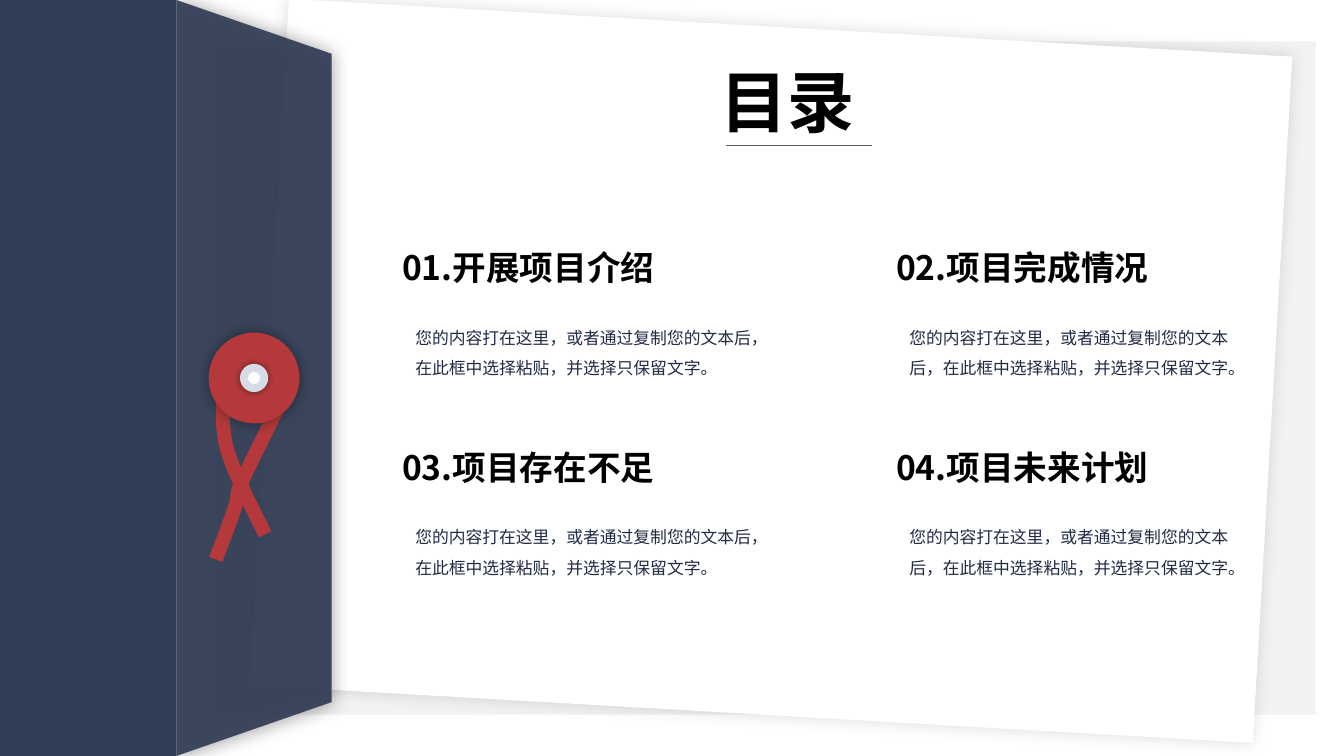
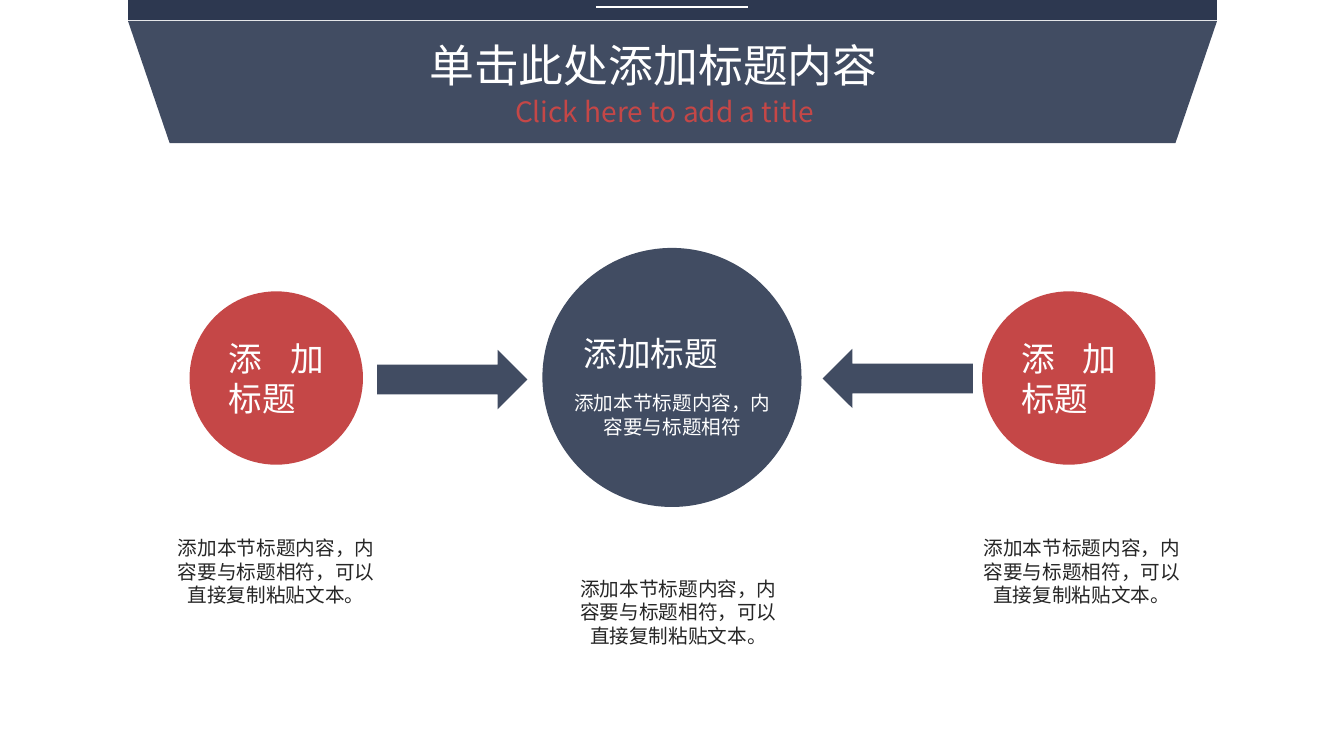
from lxml import etree
from pptx import Presentation
from pptx.dml.color import RGBColor
from pptx.enum import shapes, text
from pptx.oxml import ns
from pptx.util import Inches, Pt


class Theme:
    font = "Noto Sans CJK SC"
    navy, deep, slate = "313D55", "202C46", "414C62"
    red, coral = "B5393A", "C54747"
    white, black, ink = "FFFFFF", "000000", "262626"
    panel, metal, rule = "F2F2F2", "D6DCE5", "595959"
    cover, title, heading, sub, note, body = 48, 32, 24, 20, 14, 12


SHAPE, ALIGN = shapes.MSO_SHAPE, text.PP_ALIGN

# Content
CONTENTS_TITLE = "目录"
SECTIONS = ["01.开展项目介绍", "02.项目完成情况", "03.项目存在不足", "04.项目未来计划"]
SECTION_TEXT = "您的内容打在这里，或者通过复制您的文本后，在此框中选择粘贴，并选择只保留文字。"
COLUMNS = [(3.89, 3.58), (8.79, 3.5)]  # left, body width
ROW_TOP, ROW_STEP = 2.4, 1.98

PAGE_TITLE = "单击此处添加标题内容"
PAGE_SUBTITLE = "Click here to add a title"
LABEL = "添加标题"
HUB_TEXT = "添加本节标题内容，内容要与标题相符"
NOTE = "添加本节标题内容，内容要与标题相符，可以直接复制粘贴文本。"
SIDE_CIRCLES = [1.88, 9.74]
ARROWS = [(3.74, 3.47, 0), (8.16, 3.46, 180)]  # left, top, rotation
NOTES = [(1.66, 5.27), (9.65, 5.27), (5.65, 5.67)]

# Ribbon: start point, then cubic curves (two controls and an end)
RIBBON_START = (2.63, 5.3)
RIBBON = [
    ((2.48, 5), (2.32, 4.69), (2.25, 4.45)),
    ((2.19, 4.21), (2.21, 4), (2.23, 3.84)),
    ((2.24, 3.68), (2.25, 3.52), (2.33, 3.46)),
    ((2.41, 3.41), (2.62, 3.47), (2.7, 3.51)),
    ((2.79, 3.55), (2.83, 3.64), (2.85, 3.71)),
    ((2.86, 3.79), (2.87, 3.78), (2.79, 3.96)),
    ((2.72, 4.14), (2.47, 4.61), (2.4, 4.78)),
    ((2.32, 4.96), (2.38, 4.87), (2.34, 5)),
    ((2.3, 5.13), (2.22, 5.34), (2.14, 5.55)),
]
# Button: diameter, colour, shadow (opacity %, blur pt)
BUTTON_CENTRE = (2.52, 3.75)
BUTTON = [(0.9, Theme.red, (39, 10)), (0.28, Theme.metal, (40, 5)),
          (0.12, Theme.white, None)]


# Drawing helpers
def rgb(color):
    return RGBColor.from_string(color)


def child(parent, tag, **attrs):
    return etree.SubElement(parent, ns.qn(tag), {k: str(v) for k, v in attrs.items()})


def add_shape(s, kind, x, y, w, h, color, alpha=None, shadow=None, rot=0, adj=None):
    sp = s.shapes.add_shape(kind, Inches(x), Inches(y), Inches(w), Inches(h))
    sp.rotation = rot
    if adj is not None:
        sp.adjustments[0] = adj
    sp.fill.solid()
    sp.fill.fore_color.rgb = rgb(color)
    sp.line.fill.background()
    sp.shadow.inherit = False
    props = sp._element.spPr
    if alpha:
        child(props.find(".//" + ns.qn("a:srgbClr")), "a:alpha", val=alpha * 1000)
    if shadow:
        opacity, blur = shadow
        outer = child(props.find(ns.qn("a:effectLst")), "a:outerShdw",
                      blurRad=Pt(blur), dist=0, dir=0, algn="ctr", rotWithShape=0)
        child(child(outer, "a:srgbClr", val=Theme.black), "a:alpha", val=opacity * 1000)
    return sp


def add_line(s, x1, x2, y, color, width):
    line = s.shapes.add_connector(shapes.MSO_CONNECTOR.STRAIGHT,
                                  Inches(x1), Inches(y), Inches(x2), Inches(y))
    line.line.color.rgb = rgb(color)
    line.line.width = Pt(width)
    child(line._element.spPr, "a:effectLst")


def add_text(s, content, x, y, w, h, size, color, bold=False,
             align=ALIGN.JUSTIFY, spacing=None):
    tf = s.shapes.add_textbox(Inches(x), Inches(y), Inches(w), Inches(h)).text_frame
    tf.word_wrap = True
    tf.auto_size = text.MSO_AUTO_SIZE.SHAPE_TO_FIT_TEXT
    p = tf.paragraphs[0]
    p.alignment = align
    p.line_spacing = spacing
    r = p.add_run()
    r.text = content
    r.font.size, r.font.bold, r.font.name = Pt(size), bold, Theme.font
    r.font.color.rgb = rgb(color)
    child(r.font._element, "a:ea", typeface=Theme.font)


def curve_points(start, curves, steps=12):
    points = []
    for c1, c2, end in curves:
        for i in range(1, steps + 1):
            t = i / steps
            u = 1 - t
            points.append(tuple(
                Inches(u**3 * a + 3 * u * u * t * b + 3 * u * t * t * c + t**3 * d)
                for a, b, c, d in zip(start, c1, c2, end)))
        start = end
    return points


def add_ribbon(s):
    x, y = RIBBON_START
    builder = s.shapes.build_freeform(Inches(x), Inches(y))
    builder.add_line_segments(curve_points(RIBBON_START, RIBBON), close=False)
    sp = builder.convert_to_shape()
    sp.fill.background()
    sp.line.color.rgb = rgb(Theme.red)
    sp.line.width = Pt(10)
    sp.shadow.inherit = False


# Slides
def contents_slide(s):
    # Paper and folder
    add_shape(s, SHAPE.RECTANGLE, 2.14, 0.41, 10.91, 6.68, Theme.panel)
    add_shape(s, SHAPE.RECTANGLE, 2.66, 0.27, 9.97, 6.82, Theme.white,
              shadow=(13, 11), rot=3.3)
    add_shape(s, SHAPE.TRAPEZOID, -1.23, 2.98, 7.5, 1.54, Theme.navy, alpha=92,
              shadow=(36, 13), rot=90, adj=0.347)
    add_shape(s, SHAPE.RECTANGLE, 0, 0, 1.75, 7.5, Theme.navy)

    # Ribbon and button
    add_ribbon(s)
    cx, cy = BUTTON_CENTRE
    for d, color, shadow in BUTTON:
        add_shape(s, SHAPE.OVAL, cx - d / 2, cy - d / 2, d, d, color, shadow=shadow)

    # Title and sections
    add_text(s, CONTENTS_TITLE, 7.05, 0.55, 1.71, 0.91, Theme.cover, Theme.black, bold=True)
    add_line(s, 7.2, 8.65, 1.44, Theme.rule, 0.75)
    for i, heading in enumerate(SECTIONS):
        row, col = divmod(i, len(COLUMNS))
        x, width = COLUMNS[col]
        y = ROW_TOP + row * ROW_STEP
        add_text(s, heading, x, y, 3.16, 0.5, Theme.heading, Theme.black, bold=True)
        add_text(s, SECTION_TEXT, x + 0.13, y + 0.7, width, 0.67, Theme.body, Theme.deep,
                 align=ALIGN.LEFT, spacing=1.5)


def diagram_slide(s):
    # Title band
    add_shape(s, SHAPE.TRAPEZOID, 1.27, 0.21, 10.8, 1.21, Theme.navy, alpha=92,
              rot=180, adj=0.341)
    add_shape(s, SHAPE.RECTANGLE, 1.27, 0, 10.8, 0.2, Theme.deep, alpha=94)
    add_line(s, 5.91, 7.42, 0.07, Theme.white, 1)
    add_text(s, PAGE_TITLE, 4.16, 0.33, 5.01, 0.64, Theme.title, Theme.white)
    add_text(s, PAGE_SUBTITLE, 5.01, 0.89, 3.32, 0.44, Theme.sub, Theme.coral)

    # Hub and side circles
    add_shape(s, SHAPE.OVAL, 5.38, 2.46, 2.57, 2.57, Theme.slate)
    add_text(s, LABEL, 5.69, 3.25, 1.95, 0.5, Theme.heading, Theme.white)
    add_text(s, HUB_TEXT, 5.59, 3.83, 2.16, 0.57, Theme.note, Theme.white,
             align=ALIGN.CENTER)
    for x in SIDE_CIRCLES:
        add_shape(s, SHAPE.OVAL, x, 2.89, 1.72, 1.72, Theme.coral)
        add_text(s, LABEL, x + 0.29, 3.3, 1.14, 0.91, Theme.heading, Theme.white)

    # Arrows and notes
    for x, y, rot in ARROWS:
        add_shape(s, SHAPE.RIGHT_ARROW, x, y, 1.49, 0.59, Theme.slate, rot=rot)
    for x, y in NOTES:
        add_text(s, NOTE, x, y, 2.16, 0.81, Theme.note, Theme.ink, align=ALIGN.CENTER)


def main():
    prs = Presentation()
    prs.slide_width, prs.slide_height = Inches(13.33), Inches(7.5)
    for build in (contents_slide, diagram_slide):
        build(prs.slides.add_slide(prs.slide_layouts[6]))
    prs.save("out.pptx")


if __name__ == "__main__":
    main()
